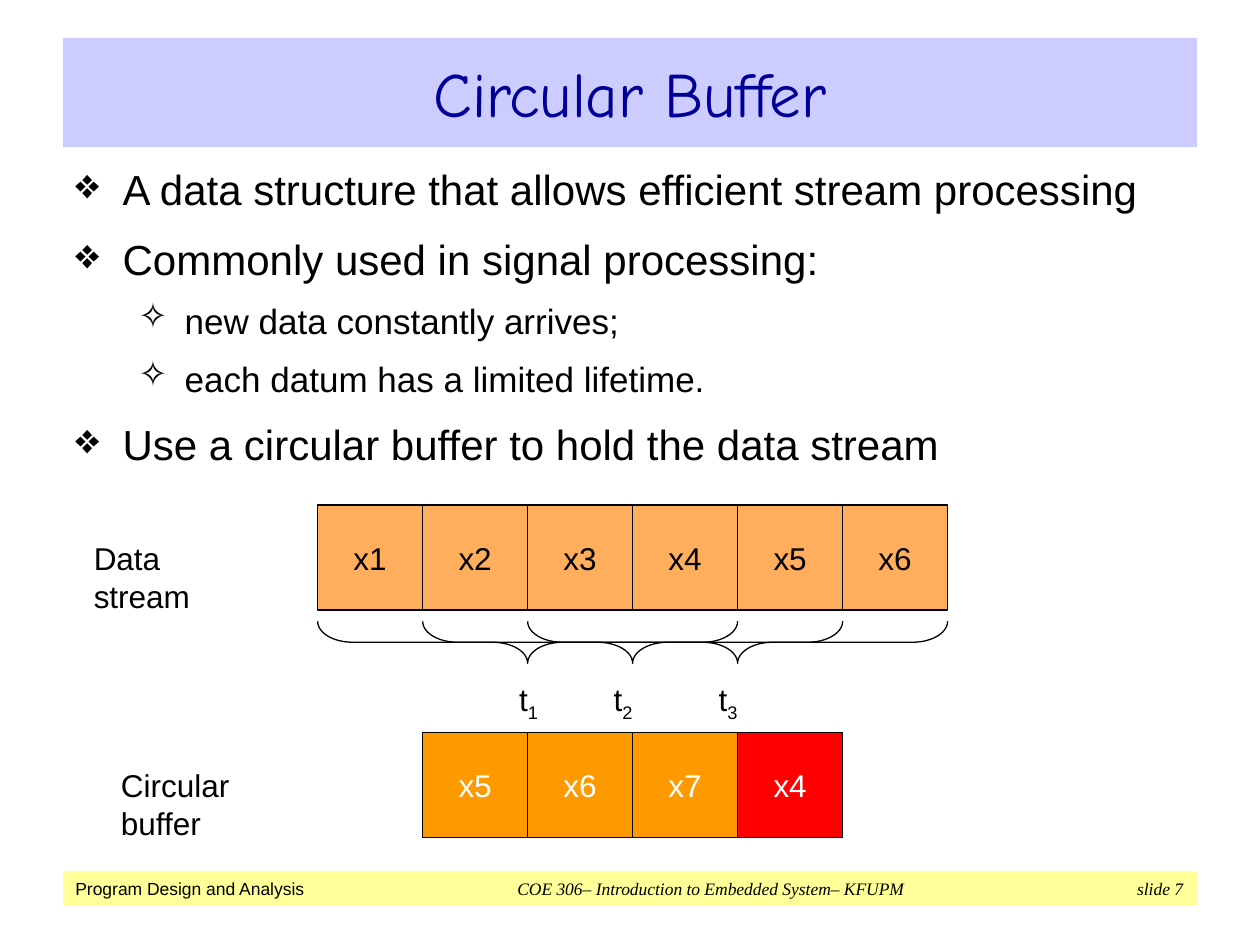
from lxml import etree
from pptx import Presentation
from pptx import util as u
from pptx.dml.color import RGBColor
from pptx.enum import shapes, text
from pptx.oxml.ns import qn

COLORS = {
    "ink": "000000",
    "white": "FFFFFF",
    "title": "000099",
    "title_band": "CCCCFF",
    "footer_band": "FFFF99",
    "stream": "FFAE5D",
    "buffer": "FF9900",
    "oldest": "FF0000",
}
CELL = 60
STREAM_LEFT, STREAM_TOP = 181.5, 288.5
BUFFER_TOP = 418.5
WINDOW = 4
BRACE_DEPTH = 24
BULLETS = {0: ("❖", 27, 27, 24, 11), 1: ("✧", 62.5, 26.5, 20, 9)}
POINTS = [
    (0, "A data structure that allows efficient stream processing"),
    (0, "Commonly used in signal processing:"),
    (1, "new data constantly arrives;"),
    (1, "each datum has a limited lifetime."),
    (0, "Use a circular buffer to hold the data stream"),
]


def color(name):
    return RGBColor.from_string(COLORS[name])


def set_font(font, size, name="Arial", ink="ink"):
    font.size = u.Pt(size)
    font.name = name
    font.color.rgb = color(ink)


def add_rect(parent, left, top, width, height, fill, outlined=False):
    rect = parent.add_shape(shapes.MSO_SHAPE.RECTANGLE, u.Pt(left), u.Pt(top), u.Pt(width), u.Pt(height))
    rect.shadow.inherit = False
    rect.fill.solid()
    rect.fill.fore_color.rgb = color(fill)
    if outlined:
        rect.line.color.rgb = color("ink")
        rect.line.width = u.Pt(0.75)
    else:
        rect.line.fill.background()
    rect.text_frame.vertical_anchor = text.MSO_ANCHOR.MIDDLE
    return rect


def add_label(parent, left, top, width, height, words, wrap=True):
    label = parent.add_textbox(u.Pt(left), u.Pt(top), u.Pt(width), u.Pt(height))
    label.text_frame.word_wrap = wrap
    paragraph = label.text_frame.paragraphs[0]
    paragraph.text = words
    set_font(paragraph.font, 18)
    return paragraph


def add_title(parent, words):
    band = add_rect(parent, 36, 21.6, 648, 62.5, "title_band")
    heading = band.text_frame.paragraphs[0]
    heading.text = words
    heading.alignment = text.PP_ALIGN.CENTER
    set_font(heading.font, 36, "Comic Neue", "title")


def add_footer(parent, chapter, course, page):
    band = add_rect(parent, 36, 498, 648, 19.5, "footer_band")
    line = band.text_frame.paragraphs[0]
    line.alignment = text.PP_ALIGN.LEFT
    set_font(line.font, 10)
    line.add_run().text = chapter
    for part in (course, page):
        run = line.add_run()
        run.text = "\t" + part
        set_font(run.font, 10, "Times New Roman")
        run.font.italic = True
    stops = etree.Element(qn("a:tabLst"))
    for position, align in ((363, "ctr"), (633, "r")):
        etree.SubElement(stops, qn("a:tab"), pos=str(u.Pt(position)), algn=align)
    line.font._element.addprevious(stops)


def add_points(parent, points):
    body = parent.add_textbox(u.Pt(36), u.Pt(90), u.Pt(648), u.Pt(190)).text_frame
    body.word_wrap = True
    for index, (level, words) in enumerate(points):
        bullet, margin, hanging, size, gap = BULLETS[level]
        point = body.add_paragraph() if index else body.paragraphs[0]
        point.text = words
        point.level = level
        point.space_before = u.Pt(gap if index else 3)
        set_font(point.font, size)
        properties = point._p.get_or_add_pPr()
        properties.set("marL", str(u.Pt(margin)))
        properties.set("indent", str(-u.Pt(hanging)))
        mark = etree.Element(qn("a:buChar"), char=bullet)
        point.font._element.addprevious(mark)


def add_cells(parent, left, top, cells, ink):
    for column, (name, fill) in enumerate(cells):
        cell = add_rect(parent, left + column * CELL, top, CELL, CELL, fill, outlined=True)
        cell.text_frame.word_wrap = False
        value = cell.text_frame.paragraphs[0]
        value.text = name
        value.alignment = text.PP_ALIGN.CENTER
        set_font(value.font, 18, ink=ink)


def add_window(parent, step, label_left):
    window = parent.add_group_shape().shapes
    span = WINDOW * CELL
    center_x = STREAM_LEFT + step * CELL + span / 2
    center_y = 367
    brace = window.add_shape(
        shapes.MSO_SHAPE.LEFT_BRACE,
        u.Pt(center_x - BRACE_DEPTH / 2), u.Pt(center_y - span / 2), u.Pt(BRACE_DEPTH), u.Pt(span),
    )
    brace.rotation = 270
    brace.adjustments[0] = 0.83
    brace.adjustments[1] = 0.5
    brace.shadow.inherit = False
    brace.fill.background()
    brace.line.color.rgb = color("ink")
    brace.line.width = u.Pt(0.75)
    time = add_label(window, label_left, 385, 26.5, 29, "t", wrap=False)
    subscript = time.add_run()
    subscript.text = str(step + 1)
    subscript.font._element.set("baseline", "-25000")


def main():
    deck = Presentation()
    deck.slide_width, deck.slide_height = u.Pt(720), u.Pt(540)
    parent = deck.slides.add_slide(deck.slide_layouts[6]).shapes

    add_footer(parent, "Program Design and Analysis",
               "COE 306– Introduction to Embedded System– KFUPM", "slide 7")
    add_title(parent, "Circular Buffer")
    add_points(parent, POINTS)

    stream = [(f"x{number}", "stream") for number in range(1, 7)]
    add_cells(parent, STREAM_LEFT, STREAM_TOP, stream, "ink")
    for step, label_left in enumerate((289.5, 343.5, 403.5)):
        add_window(parent, step, label_left)
    held = [("x5", "buffer"), ("x6", "buffer"), ("x7", "buffer"), ("x4", "oldest")]
    add_cells(parent, STREAM_LEFT + CELL, BUFFER_TOP, held, "white")

    add_label(parent, 46.5, 304.5, 104.5, 29, "Data stream")
    add_label(parent, 62, 434, 120, 29, "Circular buffer")
    deck.save("out.pptx")


if __name__ == "__main__":
    main()
